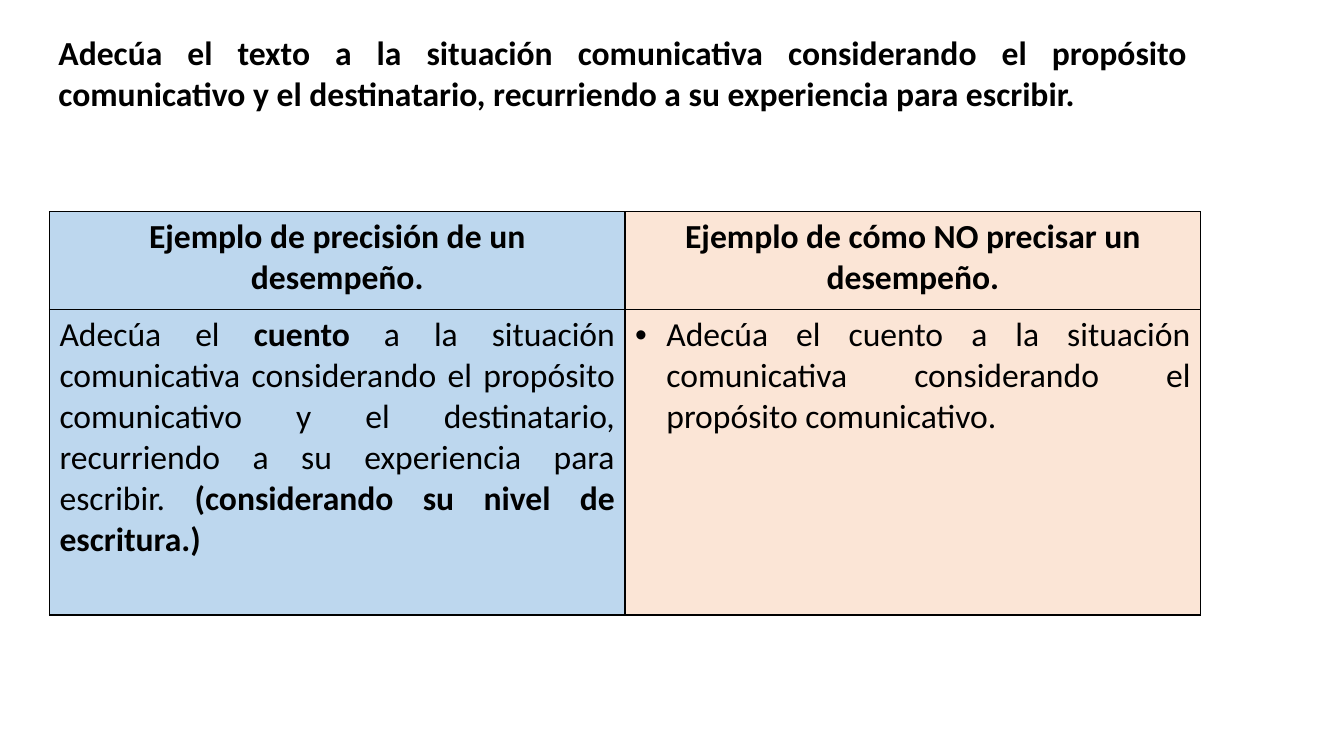
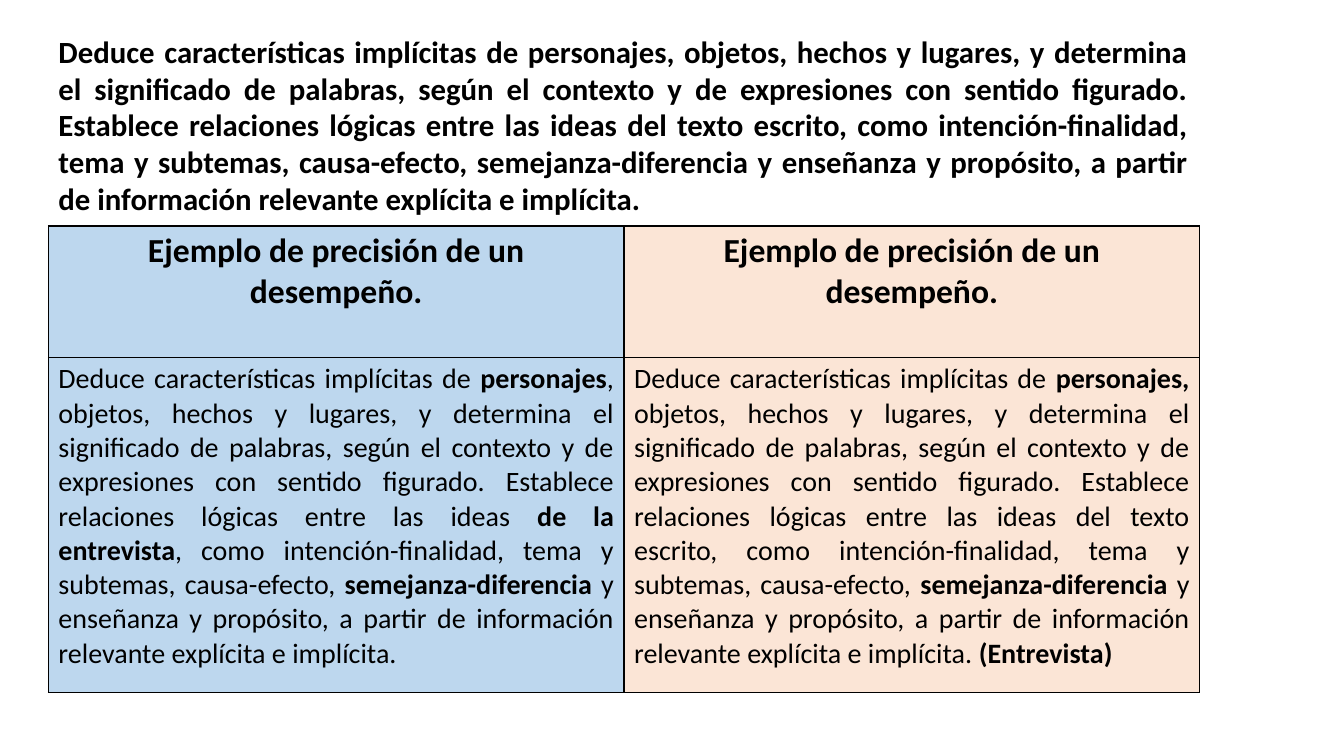
from dataclasses import dataclass

from lxml import etree
from pptx import Presentation
from pptx import util as u
from pptx.dml.color import RGBColor
from pptx.enum import text as t
from pptx.oxml import ns

# Shared look
BLACK = RGBColor(0x00, 0x00, 0x00)
BLUE = RGBColor(0xBD, 0xD7, 0xEE)
PEACH = RGBColor(0xFB, 0xE5, 0xD6)
FILLS = (BLUE, PEACH)
FONT = "Calibri"
HEAD_SIZE = 24
WIDTH, HEIGHT = u.Inches(13.33), u.Inches(7.5)

# Places, in percent of the slide's width or height
LEFT, TOP = 3.6, 3.6
TITLE_WIDTH, COL_WIDTH = 85.5, 42.83
INDENT = u.Inches(0.31)

GOOD = "Ejemplo de precisión de un desempeño."
BAD = "Ejemplo de cómo NO precisar un desempeño."


@dataclass
class Entry:
    text: str  # asterisks enclose the bold parts
    bullet: bool = False


@dataclass
class Page:
    title: str
    title_size: int
    title_high: float
    left: float
    top: float
    rows: tuple[float, float]
    heads: tuple[str, str]
    body: tuple[Entry, Entry]
    size: int


PAGES = [
    Page(
        title="Adecúa el texto a la situación comunicativa considerando el propósito "
        "comunicativo y el destinatario, recurriendo a su experiencia para escribir.",
        title_size=24, title_high=12.1, left=3.68, top=28, rows=(12.95, 40.4),
        heads=(GOOD, BAD),
        body=(
            Entry("Adecúa el *cuento* a la situación comunicativa considerando el "
                  "propósito comunicativo y el destinatario, recurriendo a su "
                  "experiencia para escribir. *(considerando su nivel de escritura.)*"),
            Entry("Adecúa el cuento a la situación comunicativa considerando el "
                  "propósito comunicativo.", bullet=True),
        ),
        size=24,
    ),
    Page(
        title="Deduce características implícitas de personajes, objetos, hechos y "
        "lugares, y determina el significado de palabras, según el contexto y de "
        "expresiones con sentido figurado. Establece relaciones lógicas entre las "
        "ideas del texto escrito, como intención-finalidad, tema y subtemas, "
        "causa-efecto, semejanza-diferencia y enseñanza y propósito, a partir de "
        "información relevante explícita e implícita.",
        title_size=22, title_high=26, left=LEFT, top=29.9, rows=(17.35, 44.3),
        heads=(GOOD, GOOD),
        body=(
            Entry("Deduce características implícitas de *personajes*, objetos, hechos y "
                  "lugares, y determina el significado de palabras, según el contexto y "
                  "de expresiones con sentido figurado. Establece relaciones lógicas "
                  "entre las ideas *de la entrevista*, como intención-finalidad, tema y "
                  "subtemas, causa-efecto, *semejanza-diferencia* y enseñanza y "
                  "propósito, a partir de información relevante explícita e implícita."),
            Entry("Deduce características implícitas de *personajes,* objetos, hechos y "
                  "lugares, y determina el significado de palabras, según el contexto y "
                  "de expresiones con sentido figurado. Establece relaciones lógicas "
                  "entre las ideas del texto escrito, como intención-finalidad, tema y "
                  "subtemas, causa-efecto, *semejanza-diferencia* y enseñanza y "
                  "propósito, a partir de información relevante explícita e implícita. "
                  "*(Entrevista)*"),
        ),
        size=20,
    ),
]


def across(share: float) -> int:
    return round(WIDTH * share / 100)


def down(share: float) -> int:
    return round(HEIGHT * share / 100)


def style(run, size: int, bold: bool) -> None:
    font = run.font
    font.name, font.size, font.bold = FONT, u.Pt(size), bold
    font.color.rgb = BLACK


def write(par, text: str, size: int, align) -> None:
    """Fill a paragraph; every second part between asterisks is bold."""
    par.alignment = align
    for i, part in enumerate(text.split("*")):
        if part:
            run = par.add_run()
            run.text = part
            style(run, size, bold=i % 2 == 1)


def add_dot(par) -> None:
    props = par._p.get_or_add_pPr()
    props.set("marL", str(INDENT))
    props.set("indent", str(-INDENT))
    etree.SubElement(props, ns.qn("a:buFont"), typeface="Arial")
    etree.SubElement(props, ns.qn("a:buChar"), char="•")


def frame(cell, color: RGBColor) -> None:
    """Fill a cell and rule its four sides."""
    cell.fill.solid()
    cell.fill.fore_color.rgb = color
    props = cell._tc.get_or_add_tcPr()
    for i, side in enumerate("LRTB"):
        line = etree.Element(ns.qn(f"a:ln{side}"), w=str(u.Pt(1)))
        fill = etree.SubElement(line, ns.qn("a:solidFill"))
        etree.SubElement(fill, ns.qn("a:srgbClr"), val=str(BLACK))
        props.insert(i, line)


def add_title(slide, page: Page) -> None:
    title = slide.shapes.title
    title.left, title.top = across(LEFT), down(TOP)
    title.width, title.height = across(TITLE_WIDTH), down(page.title_high)
    box = title.text_frame
    box.text = page.title
    box.word_wrap = True
    box.auto_size = t.MSO_AUTO_SIZE.SHAPE_TO_FIT_TEXT
    box.vertical_anchor = t.MSO_ANCHOR.TOP
    par = box.paragraphs[0]
    par.alignment = t.PP_ALIGN.JUSTIFY
    style(par.runs[0], page.title_size, bold=True)


def add_grid(slide, page: Page) -> None:
    table = slide.shapes.add_table(
        2, 2, across(page.left), down(page.top),
        across(2 * COL_WIDTH), down(sum(page.rows))).table
    table.first_row = table.horz_banding = False
    for row, high in zip(table.rows, page.rows):
        row.height = down(high)
    for i, (head, entry, color) in enumerate(zip(page.heads, page.body, FILLS)):
        table.columns[i].width = across(COL_WIDTH)
        top, low = table.cell(0, i), table.cell(1, i)
        frame(top, color)
        frame(low, color)
        write(top.text_frame.paragraphs[0], f"*{head}*", HEAD_SIZE, t.PP_ALIGN.CENTER)
        par = low.text_frame.paragraphs[0]
        if entry.bullet:
            add_dot(par)
        write(par, entry.text, page.size, t.PP_ALIGN.JUSTIFY)


def main() -> None:
    deck = Presentation()
    deck.slide_width, deck.slide_height = WIDTH, HEIGHT
    plain = deck.slide_layouts.get_by_name("Title Only")
    for page in PAGES:
        slide = deck.slides.add_slide(plain)
        add_title(slide, page)
        add_grid(slide, page)
    deck.save("out.pptx")


if __name__ == "__main__":
    main()
